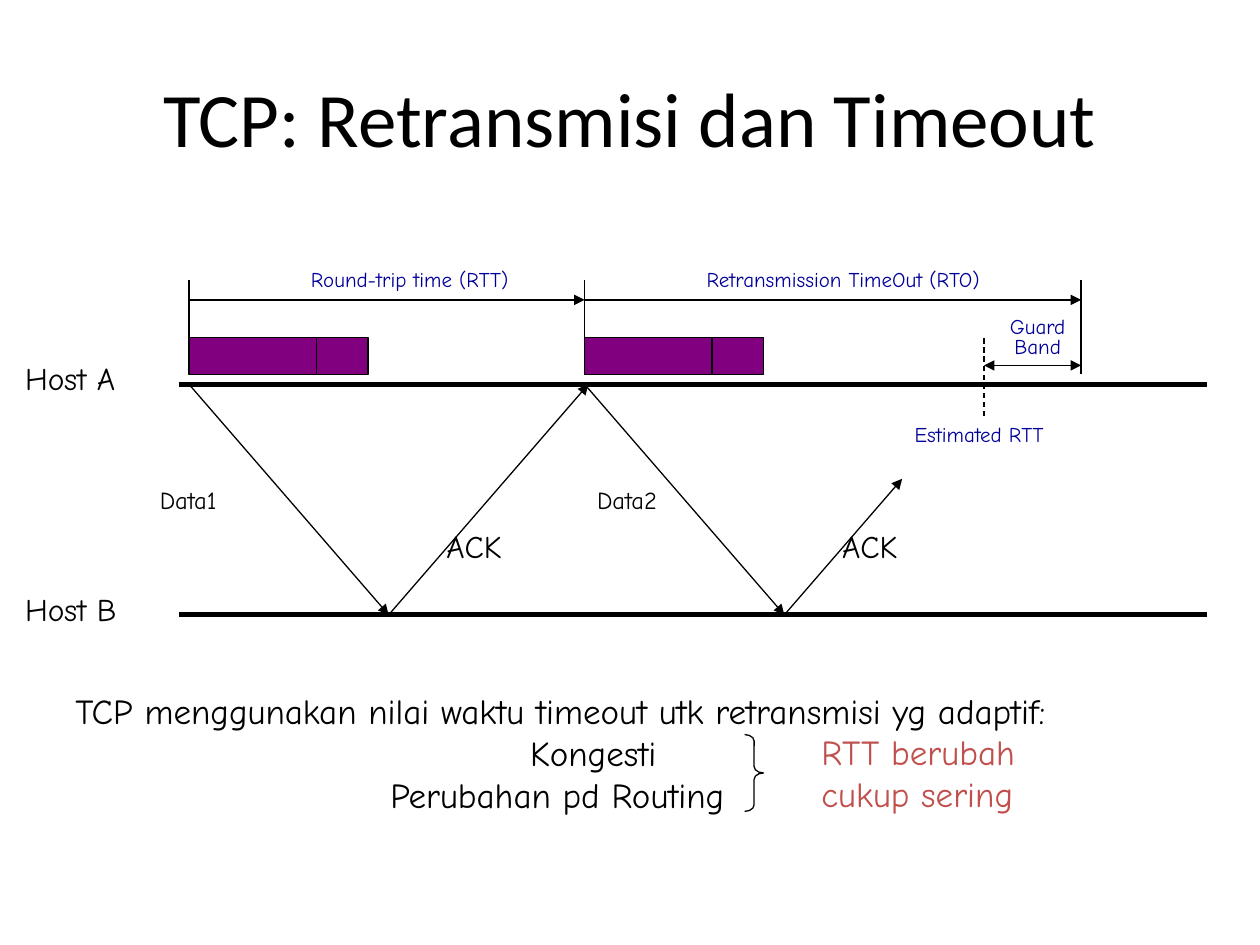
"""Builds the slide on TCP retransmission and timeout."""
from pptx import Presentation
from pptx.dml.color import RGBColor
from pptx.enum import dml, shapes, text
from pptx.oxml.ns import qn
from pptx.util import Inches, Pt
from lxml import etree

COLORS = {"ink": "000000", "label": "000099", "packet": "800080", "accent": "C0504D"}
HAND = "Comic Neue"

deck = Presentation()
deck.slide_width, deck.slide_height = Inches(10), Inches(7.5)
CELL = deck.slide_width / 100
page = deck.slides.add_slide(deck.slide_layouts[5])


def add_line(x1, y1, x2, y2, width=0.75, ends=()):
    """Draw a line between two grid points, with arrowheads at the named ends."""
    points = [round(value * CELL) for value in (x1, y1, x2, y2)]
    line = page.shapes.add_connector(shapes.MSO_CONNECTOR.STRAIGHT, *points)
    line.line.color.rgb = RGBColor.from_string(COLORS["ink"])
    line.line.width = Pt(width)
    for end in ends:
        etree.SubElement(line.line._get_or_add_ln(), qn(f"a:{end}"), type="triangle")
    etree.SubElement(line._element.spPr, qn("a:effectLst"))
    return line


def add_text(x, y, width, height, lines, size, color="ink"):
    """Place a text box on the grid, one paragraph for each line."""
    box = page.shapes.add_textbox(*[round(value * CELL) for value in (x, y, width, height)])
    box.text_frame.word_wrap = True
    for index, words in enumerate(lines):
        para = box.text_frame.add_paragraph() if index else box.text_frame.paragraphs[0]
        span = para.add_run()
        span.text = words
        span.font.name, span.font.size = HAND, Pt(size)
        span.font.color.rgb = RGBColor.from_string(COLORS[color])
    return box.text_frame


title = page.shapes.title
title.left, title.top, title.width, title.height = [round(n * CELL) for n in (5, 3, 90, 12.5)]
title.text_frame.vertical_anchor = text.MSO_ANCHOR.MIDDLE
para = title.text_frame.paragraphs[0]
para.alignment = text.PP_ALIGN.CENTER
span = para.add_run()
span.text = "TCP: Retransmisi dan Timeout"
span.font.name, span.font.size = "Calibri", Pt(44)
span.font.color.rgb = RGBColor.from_string(COLORS["ink"])

HOST_A, HOST_B = 30.5, 48.8
FIRST, SECOND, EXPIRY, ESTIMATE = 15, 46.4, 85.8, 78.1
PACKET_TOP, PACKET_BOTTOM, MARK_TOP, SPAN_ROW = 26.8, 29.7, 22.2, 23.8

for name, row in (("Host A", HOST_A), ("Host B", HOST_B)):
    add_text(1, row - 2.5, 12.9, 5, [name], 18)
    add_line(14.2, row, 95.8, row, width=3)

for start, finish, ack_x, ack_y, interval, label_width in (
    (FIRST, SECOND, 46.7, HOST_A, "Round-trip time (RTT)", 19.3),
    (SECOND, EXPIRY, 71.6, 38, "Retransmission TimeOut (RTO)", 26.2),
):
    bounds = (start, PACKET_TOP, 14.2, PACKET_BOTTOM - PACKET_TOP)
    packet = page.shapes.add_shape(shapes.MSO_SHAPE.RECTANGLE, *[round(n * CELL) for n in bounds])
    packet.shadow.inherit = False
    packet.fill.solid()
    packet.fill.fore_color.rgb = RGBColor.from_string(COLORS["packet"])
    packet.line.color.rgb = RGBColor.from_string(COLORS["ink"])
    packet.line.width = Pt(0.75)
    add_line(start + 10.1, PACKET_TOP, start + 10.1, PACKET_BOTTOM)
    arrival = start + 15.85
    add_line(start, HOST_A, arrival, HOST_B, ends=["tailEnd"])
    add_line(arrival, HOST_B, ack_x, ack_y, ends=["tailEnd"])
    add_text(start + 19.45, 41.3, 8.5, 5, ["ACK"], 18)
    add_line(start, SPAN_ROW, finish, SPAN_ROW, ends=["tailEnd"])
    add_text(start + 8.7, 20.7, label_width, 3, [interval], 12, "label")

for mark in (FIRST, SECOND, EXPIRY):
    add_line(mark, PACKET_BOTTOM, mark, MARK_TOP)

add_text(11.7, 38, 7.2, 3.3, ["Data1"], 14)
add_text(SECOND, 38, 7.5, 3.3, ["Data2"], 14)

estimate = add_line(ESTIMATE, 33, ESTIMATE, PACKET_TOP)
estimate.line.dash_style = dml.MSO_LINE.DASH
add_text(71.6, 33, 13.8, 3, ["Estimated RTT"], 12, "label")
add_line(ESTIMATE, 29, EXPIRY, 29, ends=["headEnd", "tailEnd"])
guard = add_text(78.9, 24.8, 6.9, 4.2, ["Guard Band"], 12, "label")
guard.paragraphs[0].alignment = text.PP_ALIGN.CENTER
guard.paragraphs[0].line_spacing = 0.8

causes = add_text(5, 54.2, 90.8, 11, [
    "TCP menggunakan nilai waktu timeout utk retransmisi yg adaptif:",
    "Kongesti",
    "Perubahan pd Routing",
], 20)
for para, margin in zip(causes.paragraphs[1:], (36.1, 25)):
    para._p.get_or_add_pPr().set("marL", str(round(margin * CELL)))

brace = page.shapes.add_shape(
    shapes.MSO_SHAPE.RIGHT_BRACE, *[round(n * CELL) for n in (59.1, 58.3, 1.5, 6.1)])
brace.adjustments[0], brace.adjustments[1] = 0.34, 0.5
brace.shadow.inherit = False
brace.fill.background()
brace.line.color.rgb = RGBColor.from_string(COLORS["ink"])
brace.line.width = Pt(0.75)
add_text(64.2, 57.5, 21.7, 7.7, ["RTT berubah cukup sering"], 20, "accent")

deck.save("out.pptx")
